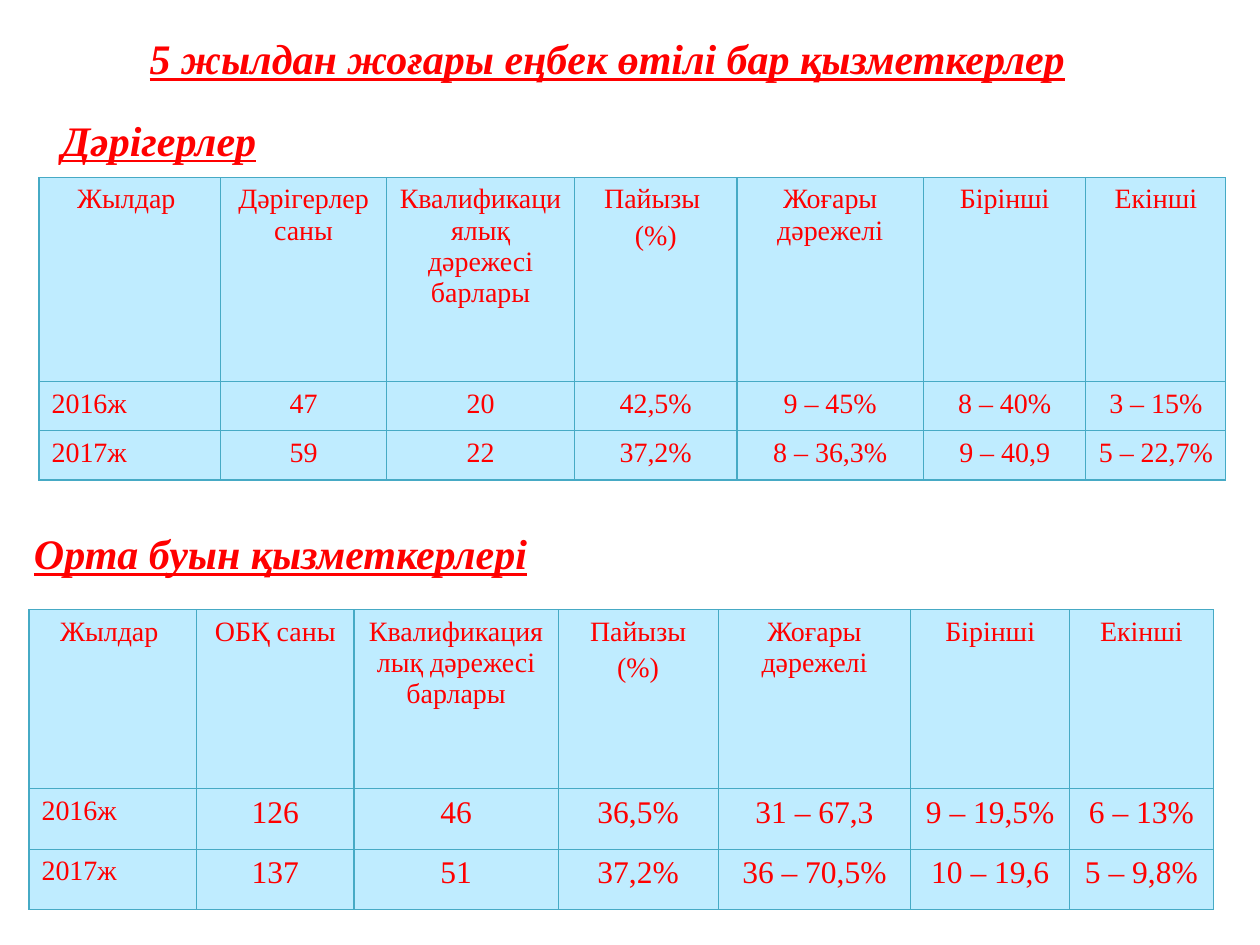
from lxml import etree
from pptx import Presentation
from pptx import util as u
from pptx.dml.color import RGBColor
from pptx.enum import text
from pptx.oxml.ns import qn

COLORS = {"text": "FF0000", "cell": "BFECFF", "border": "46AAC5"}
CENTER, LEFT = text.PP_ALIGN.CENTER, text.PP_ALIGN.LEFT


def rgb(name):
    return RGBColor.from_string(COLORS[name])


def write(tf, content, size=16, align=CENTER, heading=False, gap=0):
    """Fill a text frame, one paragraph per line, with gap points between them."""
    for i, line in enumerate(content.split("\n")):
        p = tf.add_paragraph() if i else tf.paragraphs[0]
        p.alignment = align
        if i:
            p.space_before = u.Pt(gap)
        r = p.add_run()
        r.text = line
        r.font.name = "Times New Roman"
        r.font.size = u.Pt(size)
        r.font.color.rgb = rgb("text")
        r.font.bold = r.font.italic = r.font.underline = heading


class Deck:
    """Holds the table style and the current slide."""

    border_width = 0.75

    def __init__(self, width, height):
        self.prs = Presentation()
        self.prs.slide_width = u.Inches(width)
        self.prs.slide_height = u.Inches(height)
        self.s = self.prs.slides.add_slide(self.prs.slide_layouts[6])

    def heading(self, content, box, align=LEFT, inset=0.1, wrap=True):
        tf = self.s.shapes.add_textbox(*map(u.Inches, box)).text_frame
        tf.word_wrap = wrap
        tf.auto_size = text.MSO_AUTO_SIZE.SHAPE_TO_FIT_TEXT
        tf.margin_left = u.Inches(inset)
        write(tf, content, size=24, align=align, heading=True)

    def style_cell(self, cell):
        tcPr = cell._tc.get_or_add_tcPr()
        for side in ("lnL", "lnR", "lnT", "lnB"):
            ln = etree.SubElement(tcPr, qn(f"a:{side}"), w=str(u.Pt(self.border_width)))
            fill = etree.SubElement(ln, qn("a:solidFill"))
            etree.SubElement(fill, qn("a:srgbClr"), val=COLORS["border"])
        cell.fill.solid()
        cell.fill.fore_color.rgb = rgb("cell")

    def table(self, left, top, cols, heights, rows, value_size):
        frame = self.s.shapes.add_table(
            len(rows), len(cols), u.Inches(left), u.Inches(top),
            u.Inches(sum(cols)), u.Inches(sum(heights)))
        tbl = frame.table
        tbl.first_row = tbl.horz_banding = False
        for column, width in zip(tbl.columns, cols):
            column.width = u.Inches(width)
        for i, (row, height) in enumerate(zip(rows, heights)):
            tbl.rows[i].height = u.Inches(height)
            for j, content in enumerate(row):
                cell = tbl.cell(i, j)
                self.style_cell(cell)
                is_value, is_year = i > 0 and j > 0, i > 0 and j == 0
                write(cell.text_frame, content, size=value_size if is_value else 16,
                      align=LEFT if is_year else CENTER, gap=3.2)


def header(count_label, percent_label):
    return ["Жылдар ", count_label, "Квалификациялық дәрежесі барлары",
            percent_label, "Жоғары дәрежелі", "Бірінші", "Екінші"]


def main():
    deck = Deck(10, 7.5)
    deck.table(
        0.31, 1.41, [1.44, 1.32, 1.49, 1.29, 1.48, 1.29, 1.11], [1.62, 0.39, 0.39],
        [header("Дәрігерлер саны", "Пайызы \n(%)"),
         ["2016ж", "47", "20", "42,5%", "9 – 45%", "8 – 40%", "3 – 15%"],
         ["2017ж", "59", "22", "37,2%", "8 – 36,3%", "9 – 40,9", "5 – 22,7%"]],
        value_size=16)
    deck.heading("5 жылдан жоғары еңбек өтілі бар қызметкерлер",
                 (0.27, 0.21, 9.1, 0.51), align=CENTER)
    deck.table(
        0.23, 4.84, [1.33, 1.25, 1.62, 1.27, 1.53, 1.26, 1.14], [1.42, 0.48, 0.48],
        [header("ОБҚ саны", "Пайызы\n(%)"),
         ["2016ж", "126", "46", "36,5%", "31 – 67,3", "9 – 19,5%", "6 – 13%"],
         ["2017ж", "137", "51", "37,2%", "36 – 70,5%", "10 – 19,6", "5 – 9,8%"]],
        value_size=18)
    deck.heading("Орта буын қызметкерлері", (0, 4.14, 9.73, 0.51), inset=0.27)
    deck.heading("Дәрігерлер", (0.39, 0.86, 1.76, 0.5), wrap=False)
    deck.prs.save("out.pptx")


if __name__ == "__main__":
    main()
